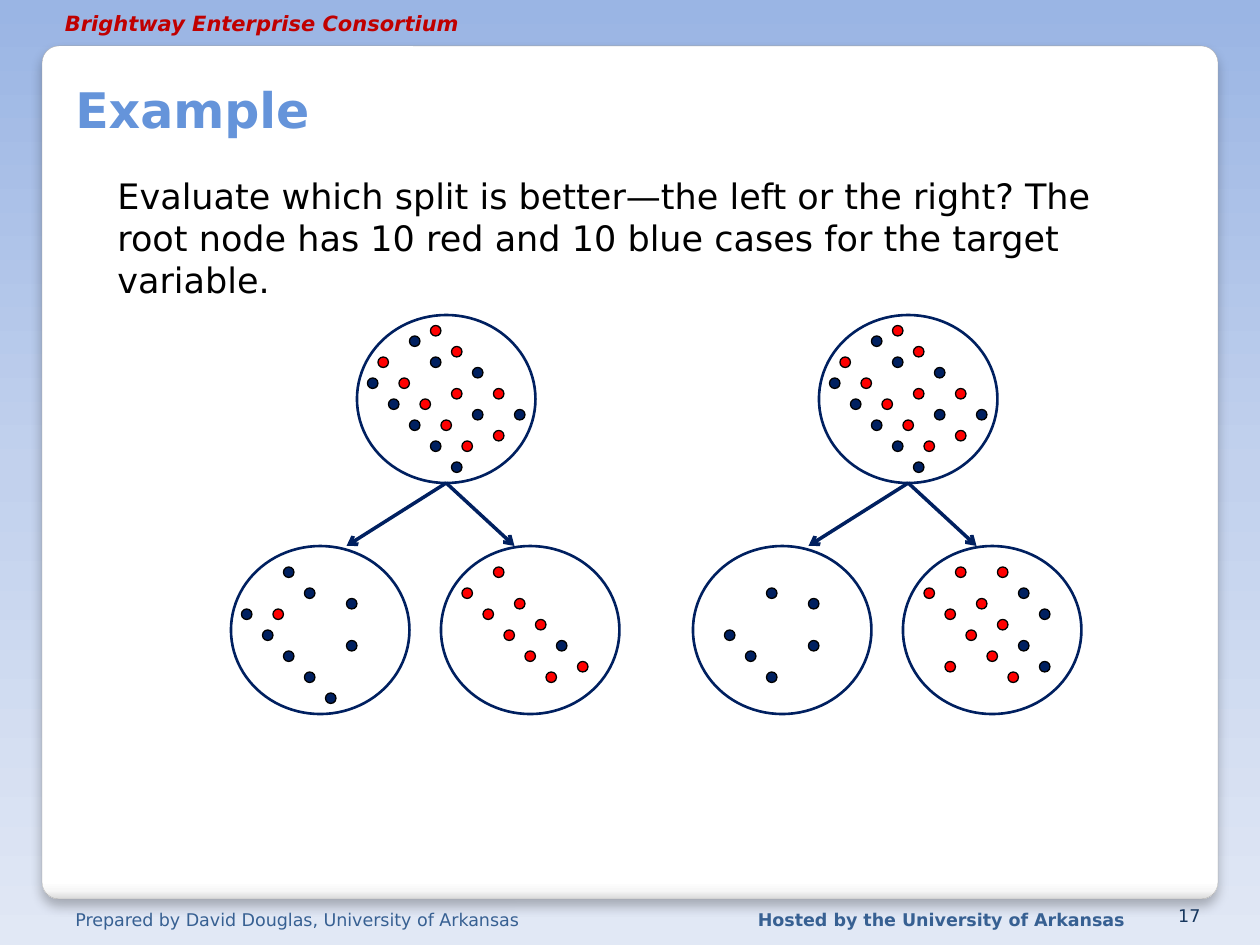
from dataclasses import dataclass

import lxml.etree
import pptx
import pptx.dml.color
import pptx.enum.shapes
import pptx.enum.text
import pptx.oxml.ns
import pptx.util

qn = pptx.oxml.ns.qn
SHAPES = pptx.enum.shapes.MSO_SHAPE
ALIGN = pptx.enum.text.PP_ALIGN
ANCHOR = pptx.enum.text.MSO_ANCHOR

EMU_PER_PX = 9525
CELL = 8  # dots, nodes and arrows sit on a grid of this many px
NODE_WIDTH, NODE_HEIGHT = 17 * CELL, 16 * CELL
ROOT_TOP, CHILD_TOP = 240, 416


@dataclass(frozen=True)
class Theme:
    font: str = "DejaVu Sans"
    navy: str = "002060"
    red: str = "FF0000"
    black: str = "000000"
    header: str = "C00000"
    title: str = "6594DA"
    footer: str = "376092"
    number: str = "17375E"
    panel_edge: str = "A4A4A4"
    background: tuple = ((0, "9AB5E4"), (50, "C2D1ED"), (100, "E1E8F5"))
    panel: tuple = ((0, "FFFFFF"), (98, "FFFFFF"), (99, "F7F7F7"), (100, "DADADA"))
    title_size: int = 28
    body_size: int = 20
    header_size: int = 12
    footer_size: int = 10


THEME = Theme()


@dataclass(frozen=True)
class Label:
    text: str
    box: tuple[int, int, int, int]
    size: int
    color: str
    bold: bool = False
    italic: bool = False
    align: ALIGN = ALIGN.LEFT
    anchor: ANCHOR = ANCHOR.TOP


@dataclass(frozen=True)
class Node:
    """A circle of cases; dots are grid cells counted from its top left."""
    left: int
    top: int
    blue: tuple
    red: tuple = ()


@dataclass(frozen=True)
class Split:
    root: Node
    children: tuple[Node, Node]


LABELS = (
    Label("Brightway Enterprise Consortium", (40, 3, 360, 29), THEME.header_size,
          THEME.header, bold=True, italic=True),
    Label("Example", (48, 0, 859, 110), THEME.title_size, THEME.title, bold=True,
          anchor=ANCHOR.BOTTOM),
    Label("17", (876, 688, 48, 22), THEME.footer_size, THEME.number,
          align=ALIGN.RIGHT, anchor=ANCHOR.BOTTOM),
    Label("Prepared by David Douglas, University of Arkansas", (48, 688, 428, 22),
          THEME.footer_size, THEME.footer),
    Label("Hosted by the University of Arkansas", (568, 688, 320, 22),
          THEME.footer_size, THEME.footer, bold=True),
    Label("Evaluate which split is better—the left or the right? The root node has "
          "10 red and 10 blue cases for the target variable.", (80, 128, 784, 107),
          THEME.body_size, THEME.black),
)

BLUE_DIAGONAL = ((3, 8), (5, 10), (7, 12))
BLUE_SCATTER = ((7, 4), (11, 5), (11, 9))
RED_DIAGONAL = ((2, 4), (4, 6), (6, 8), (8, 10), (10, 12))
RED_SCATTER = ((5, 2), (7, 5), (9, 7))
BLUE_LEFT = BLUE_DIAGONAL + BLUE_SCATTER
BLUE_FULL = BLUE_LEFT + ((1, 6), (9, 14), (5, 2))
RED_RIGHT = RED_DIAGONAL + RED_SCATTER
ROOT_BLUE = BLUE_FULL + ((15, 9),)
ROOT_RED = RED_DIAGONAL + ((7, 1), (9, 3), (9, 7), (13, 7), (13, 11))

SPLITS = (
    Split(Node(272, ROOT_TOP, ROOT_BLUE, ROOT_RED), (
        Node(176, CHILD_TOP, BLUE_FULL, ((4, 6),)),
        Node(336, CHILD_TOP, ((11, 9),), RED_RIGHT + ((13, 11),)))),
    Split(Node(624, ROOT_TOP, ROOT_BLUE, ROOT_RED), (
        Node(528, CHILD_TOP, BLUE_LEFT),
        Node(688, CHILD_TOP, ((11, 9), (13, 11), (13, 6), (11, 4)),
             RED_RIGHT + ((9, 2), (4, 11))))),
)


def px(*lengths: int) -> list[pptx.util.Emu]:
    return [pptx.util.Emu(length * EMU_PER_PX) for length in lengths]


def rgb(color: str) -> pptx.dml.color.RGBColor:
    return pptx.dml.color.RGBColor.from_string(color)


def set_gradient(fill, element, stops: tuple) -> None:
    """Fill from top to bottom with the stops, given as percent and colour."""
    fill.gradient()
    fill.gradient_angle = 270
    stop_list = element.find(".//" + qn("a:gsLst"))
    for old_stop in list(stop_list):
        stop_list.remove(old_stop)
    for percent, color in stops:
        stop = lxml.etree.SubElement(stop_list, qn("a:gs"), pos=str(percent * 1000))
        lxml.etree.SubElement(stop, qn("a:srgbClr"), val=color)


def draw_panel(slide) -> None:
    panel = slide.shapes.add_shape(SHAPES.ROUNDED_RECTANGLE, *px(32, 35, 896, 650))
    panel.adjustments[0] = 0.02
    panel.shadow.inherit = False
    set_gradient(panel.fill, panel._element, THEME.panel)
    panel.line.color.rgb = rgb(THEME.panel_edge)
    panel.line.width = pptx.util.Pt(0.16)
    effects = panel._element.spPr.find(qn("a:effectLst"))
    shadow = lxml.etree.SubElement(
        effects, qn("a:outerShdw"), blurRad=str(pptx.util.Pt(6)),
        dist=str(pptx.util.Pt(4)), dir="5400000", algn="t", rotWithShape="0")
    color = lxml.etree.SubElement(shadow, qn("a:srgbClr"), val=THEME.black)
    lxml.etree.SubElement(color, qn("a:alpha"), val="25000")


def draw_label(slide, label: Label) -> None:
    frame = slide.shapes.add_textbox(*px(*label.box)).text_frame
    frame.word_wrap = True
    frame.vertical_anchor = label.anchor
    paragraph = frame.paragraphs[0]
    paragraph.alignment = label.align
    run = paragraph.add_run()
    run.text = label.text
    run.font.name = THEME.font
    run.font.size = pptx.util.Pt(label.size)
    run.font.bold = label.bold
    run.font.italic = label.italic
    run.font.color.rgb = rgb(label.color)


def draw_circle(slide, box: tuple, line: str, width: float, fill: str = "") -> None:
    circle = slide.shapes.add_shape(SHAPES.FLOWCHART_CONNECTOR, *px(*box))
    circle.shadow.inherit = False
    if fill:
        circle.fill.solid()
        circle.fill.fore_color.rgb = rgb(fill)
    else:
        circle.fill.background()
    circle.line.color.rgb = rgb(line)
    circle.line.width = pptx.util.Pt(width)


def draw_node(slide, node: Node) -> None:
    draw_circle(slide, (node.left, node.top, NODE_WIDTH, NODE_HEIGHT), THEME.navy, 1.5)
    for color, dots in ((THEME.navy, node.blue), (THEME.red, node.red)):
        for column, row in dots:
            box = (node.left + column * CELL, node.top + row * CELL, CELL, CELL)
            draw_circle(slide, box, THEME.black, 0.75, color)


def draw_arrow(slide, start: tuple[int, int], end: tuple[int, int]) -> None:
    arrow = slide.shapes.add_connector(
        pptx.enum.shapes.MSO_CONNECTOR.STRAIGHT, *px(*start, *end))
    arrow.line.color.rgb = rgb(THEME.navy)
    arrow.line.width = pptx.util.Pt(2)
    lxml.etree.SubElement(arrow.line._get_or_add_ln(), qn("a:tailEnd"), type="arrow")
    lxml.etree.SubElement(arrow._element.spPr, qn("a:effectLst"))


def draw_split(slide, split: Split) -> None:
    for node in (split.root, *split.children):
        draw_node(slide, node)
    start = (split.root.left + NODE_WIDTH // 2, ROOT_TOP + NODE_HEIGHT)
    for column in (-1, 15):
        draw_arrow(slide, start, (split.root.left + column * CELL, CHILD_TOP))


def main() -> None:
    presentation = pptx.Presentation()
    presentation.slide_width, presentation.slide_height = px(960, 720)
    slide = presentation.slides.add_slide(presentation.slide_layouts[6])
    set_gradient(slide.background.fill, slide._element, THEME.background)
    draw_panel(slide)
    for label in LABELS:
        draw_label(slide, label)
    for split in SPLITS:
        draw_split(slide, split)
    presentation.save("out.pptx")


if __name__ == "__main__":
    main()
